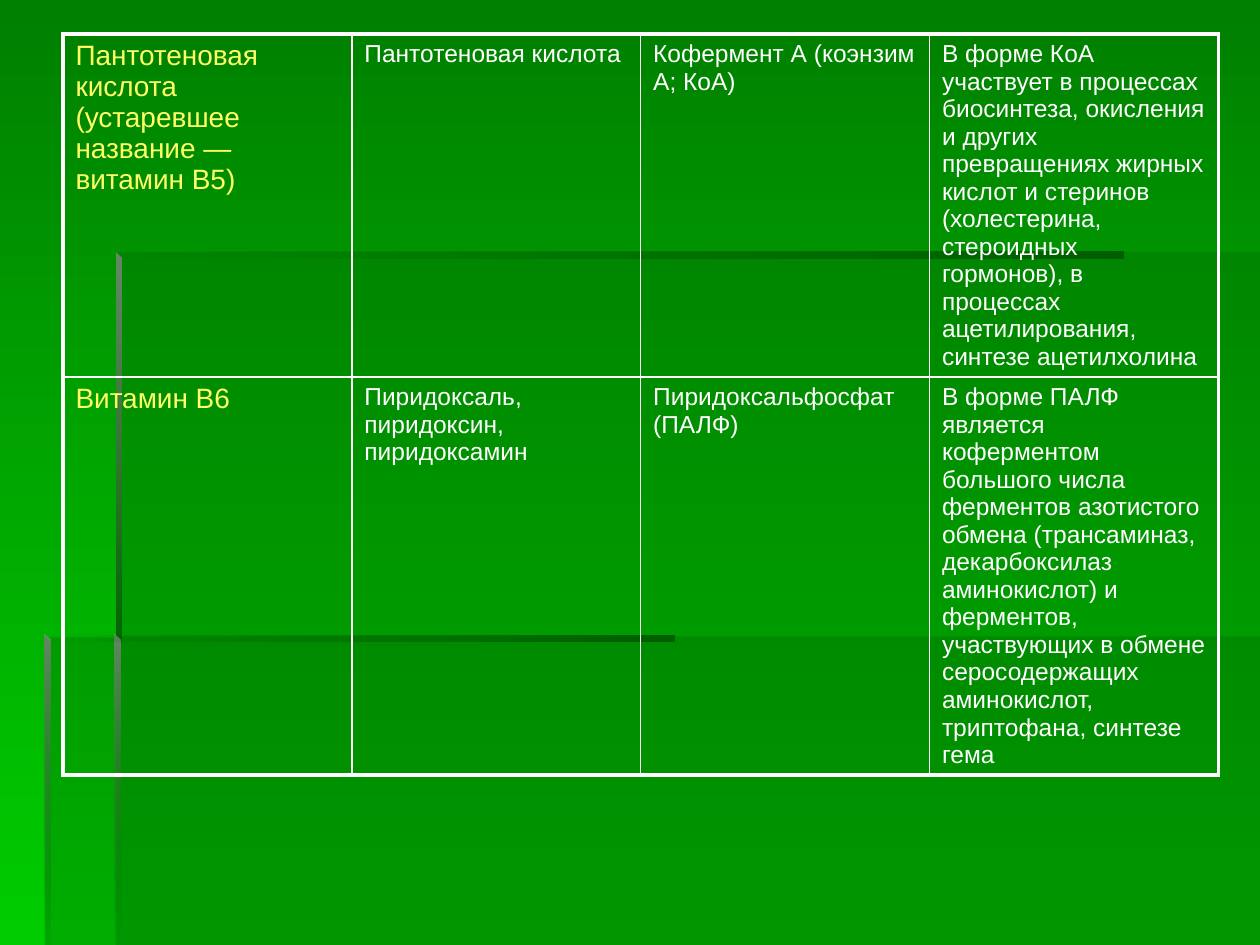
from lxml.etree import SubElement
from pptx import Presentation
from pptx.dml.color import RGBColor as RGB
from pptx.oxml.ns import qn
from pptx.util import Inches, Pt

# Content
VITAMINS = [
    ("Пантотеновая кислота (устаревшее название\u00a0— витамин В5)",
     "Пантотеновая кислота",
     "Кофермент А (коэнзим А; КоА)",
     "В форме КоА участвует в процессах биосинтеза, окисления и других "
     "превращениях жирных кислот и стеринов (холестерина, стероидных гормонов), "
     "в процессах ацетилирования, синтезе ацетилхолина"),
    ("Витамин В6",
     "Пиридоксаль, пиридоксин, пиридоксамин",
     "Пиридоксальфосфат (ПАЛФ)",
     "В форме ПАЛФ является коферментом большого числа ферментов азотистого "
     "обмена (трансаминаз, декарбоксилаз аминокислот) и ферментов, участвующих "
     "в обмене серосодержащих аминокислот, триптофана, синтезе гема"),
]

THEME = {
    "background": ("008000", "00CC00"),
    "panel": "006600",
    "bar": ("006600", "005E00"),
    "post": ("668666", "006600"),
    "border": "FFFFFF",
    "outer": 2.25,
    "inner": 1,
    "name": {"name": "Arial", "size": Pt(16), "color": "FFFF66"},
    "detail": {"name": "Arial", "size": Pt(14), "color": "FFFFFF"},
}

# Backdrop outlines in inches
PANELS = [
    [(0.92, 5.05), (0.92, 7.5), (10, 7.5), (10, 5.05)],
    [(0.94, 5.06), (0.36, 5.06), (0.36, 7.5), (10, 7.5), (10, 2), (0.94, 2)],
]
PANEL_OPACITY = 30
EDGE = 0.05
# kind, left, top, length, opacity at start and end
EDGES = [
    ("bar", 0.92, 2, 8, (0, 100)),
    ("post", 0.92, 2, 3.1, (100, 100)),
    ("post", 0.91, 5.04, 2.46, (100, 0)),
    ("bar", 0.35, 5.04, 5, (0, 100)),
    ("post", 0.35, 5.04, 2.46, (100, 10)),
]
ANGLES = {"bar": 0, "post": 270}


def set_gradient(fill, colours, angle):
    fill.gradient()
    fill.gradient_angle = angle
    for stop, colour, position in zip(fill.gradient_stops, colours, (0, 1)):
        stop.color.rgb = RGB.from_string(colour)
        stop.position = position


def set_opacity(outline, percents):
    colours = outline._element.spPr.iter(qn("a:srgbClr"))
    for colour, percent in zip(list(colours), percents):
        if percent < 100:
            SubElement(colour, qn("a:alpha"), val=str(percent * 1000))


def add_outline(slide, points):
    corners = [(Inches(x), Inches(y)) for x, y in points]
    builder = slide.shapes.build_freeform(*corners[0])
    builder.add_line_segments(corners[1:], close=True)
    outline = builder.convert_to_shape()
    outline.shadow.inherit = False
    outline.line.fill.background()
    return outline


def edge_points(kind, left, top, length):
    if kind == "bar":
        right, bottom = left + length, top + EDGE
        return [(left, top), (left, bottom), (right, bottom), (right, top)]
    right, bottom = left + EDGE, top + length
    return [(left, top), (left, bottom), (right, bottom), (right, top + EDGE)]


def set_borders(cell, widths):
    properties = cell._tc.get_or_add_tcPr()
    for side, width in widths.items():
        line = SubElement(properties, qn(f"a:ln{side}"), w=str(Pt(width)))
        colour = SubElement(line, qn("a:solidFill"))
        SubElement(colour, qn("a:srgbClr"), val=THEME["border"])


def write_cell(cell, text, style):
    cell.text = text
    font = cell.text_frame.paragraphs[0].runs[0].font
    for attribute in ("name", "size"):
        setattr(font, attribute, style[attribute])
    font.color.rgb = RGB.from_string(style["color"])


def add_backdrop(slide):
    set_gradient(slide.background.fill, THEME["background"], 270)
    for points in PANELS:
        panel = add_outline(slide, points)
        panel.fill.solid()
        panel.fill.fore_color.rgb = RGB.from_string(THEME["panel"])
        set_opacity(panel, [PANEL_OPACITY])
    for kind, left, top, length, opacity in EDGES:
        edge = add_outline(slide, edge_points(kind, left, top, length))
        set_gradient(edge.fill, THEME[kind], ANGLES[kind])
        set_opacity(edge, opacity)


def add_vitamin_table(slide):
    rows, columns = len(VITAMINS), len(VITAMINS[0])
    frame = slide.shapes.add_table(rows, columns, Inches(0.5), Inches(0.27),
                                   Inches(9.17), Inches(1.6 * rows))
    frame.height = Inches(6.03)  # rows grow with their text
    table = frame.table
    table.first_row = table.horz_banding = False
    for r, vitamin in enumerate(VITAMINS):
        for c, text in enumerate(vitamin):
            cell = table.cell(r, c)
            on_rim = {"L": c == 0, "R": c == columns - 1,
                      "T": r == 0, "B": r == rows - 1}
            set_borders(cell, {side: THEME["outer" if rim else "inner"]
                               for side, rim in on_rim.items()})
            cell.fill.background()
            write_cell(cell, text, THEME["detail" if c else "name"])


def main():
    deck = Presentation()
    deck.slide_width, deck.slide_height = Inches(10), Inches(7.5)
    slide = deck.slides.add_slide(deck.slide_layouts[6])
    add_backdrop(slide)
    add_vitamin_table(slide)
    deck.save("out.pptx")


if __name__ == "__main__":
    main()
